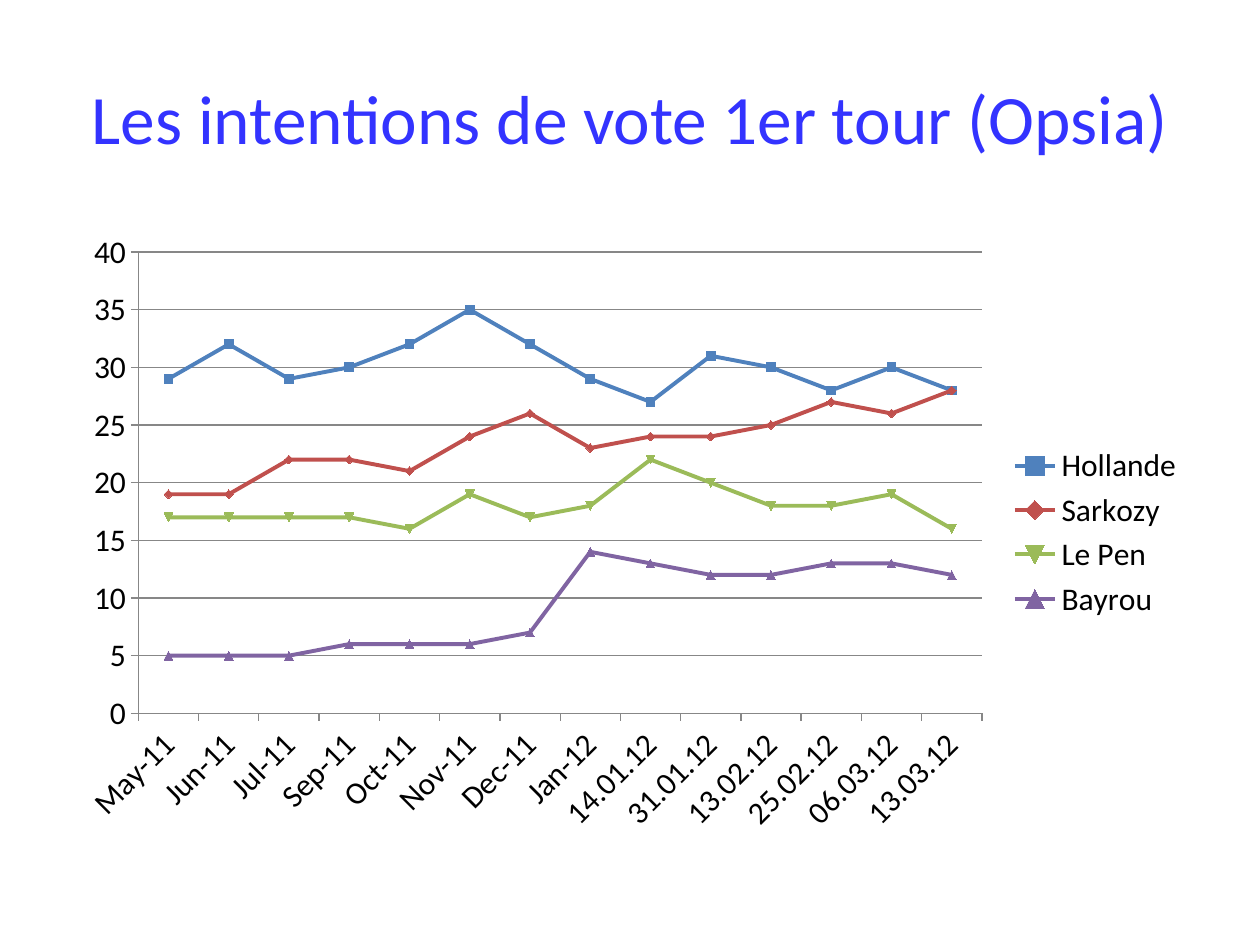
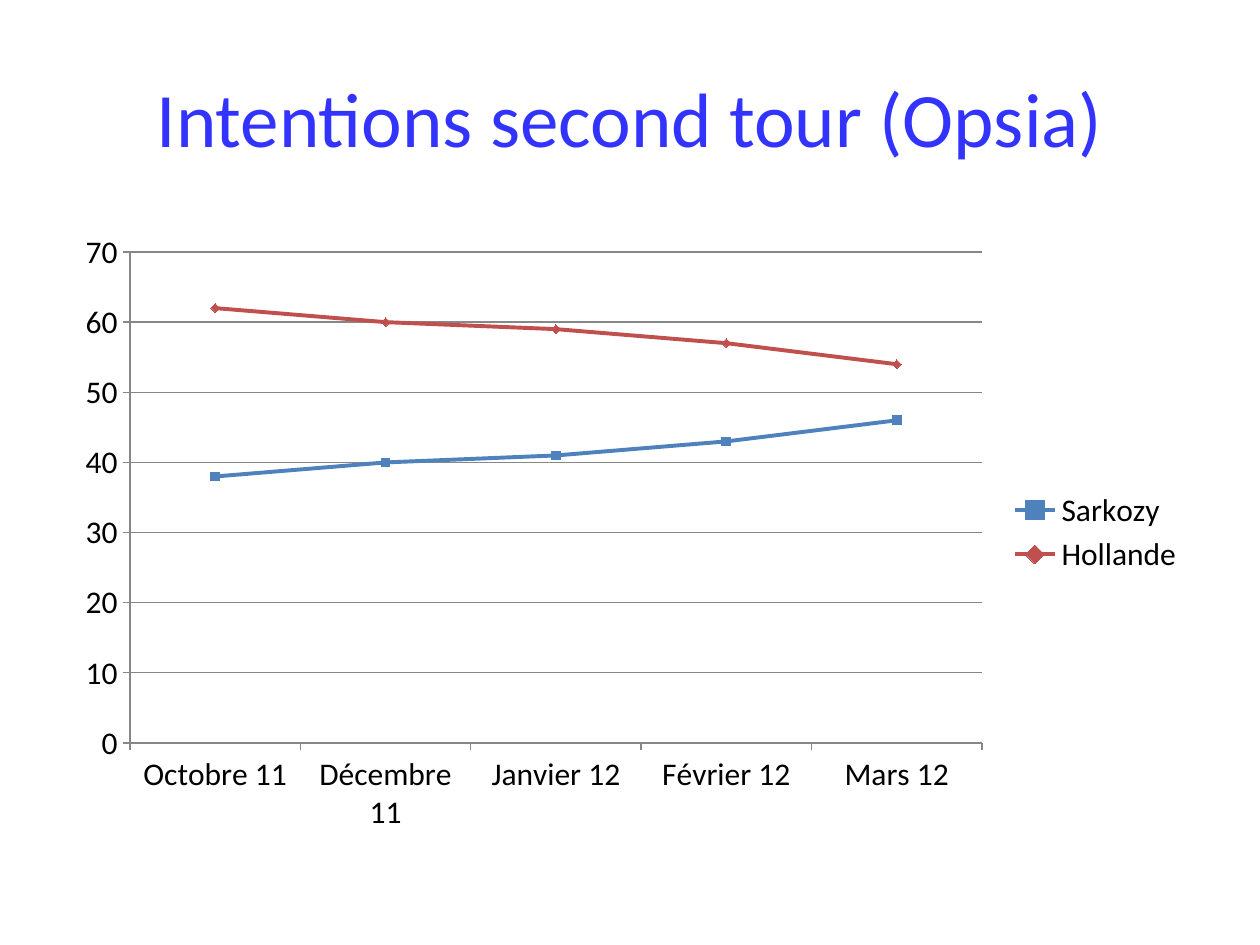
from pptx import Presentation
from pptx.chart.data import CategoryChartData
from pptx.dml.color import RGBColor
from pptx.enum.chart import XL_CHART_TYPE as ChartType, XL_LEGEND_POSITION as LegendPosition
from pptx.enum.chart import XL_TICK_MARK as TickMark
from pptx.enum.text import MSO_ANCHOR as Anchor, PP_ALIGN as Align
from pptx.util import Pt

FONT = "Calibri"
TITLE_COLOR, TEXT_COLOR, GRID_COLOR = "3333FF", "000000", "878787"
SERIES_COLORS = ["4F81BD", "C0504D", "9BBB59", "8064A2"]
TITLE_AREA = (36, 21.6, 648, 90)
CHART_AREA = (36, 126, 648, 356.4)

POLLS = [
    {
        "title": "Les intentions de vote 1er tour (Opsia)",
        "title_size": 39.6,
        "axis_top": 40,
        "axis_step": 5,
        "dates": ["May-11", "Jun-11", "Jul-11", "Sep-11", "Oct-11", "Nov-11", "Dec-11", "Jan-12",
                  "14.01.12", "31.01.12", "13.02.12", "25.02.12", "06.03.12", "13.03.12"],
        "candidates": {
            "Hollande": [29, 32, 29, 30, 32, 35, 32, 29, 27, 31, 30, 28, 30, 28],
            "Sarkozy": [19, 19, 22, 22, 21, 24, 26, 23, 24, 24, 25, 27, 26, 28],
            "Le Pen": [17, 17, 17, 17, 16, 19, 17, 18, 22, 20, 18, 18, 19, 16],
            "Bayrou": [5, 5, 5, 6, 6, 6, 7, 14, 13, 12, 12, 13, 13, 12],
        },
    },
    {
        "title": "Intentions second tour (Opsia)",
        "title_size": 44,
        "axis_top": 70,
        "axis_step": 10,
        "dates": ["Octobre 11", "Décembre 11", "Janvier 12", "Février 12", "Mars 12"],
        "candidates": {
            "Sarkozy": [38, 40, 41, 43, 46],
            "Hollande": [62, 60, 59, 57, 54],
        },
    },
]


def color(code):
    return RGBColor.from_string(code)


def set_font(font, size, code):
    font.name = FONT
    font.size = Pt(size)
    font.color.rgb = color(code)


def set_line(line, code, width):
    line.color.rgb = color(code)
    line.width = Pt(width)


def add_title(page, text, size):
    box = page.shapes.title
    box.left, box.top, box.width, box.height = map(Pt, TITLE_AREA)
    box.text_frame.vertical_anchor = Anchor.MIDDLE
    para = box.text_frame.paragraphs[0]
    para.alignment = Align.CENTER
    span = para.add_run()
    span.text = text
    set_font(span.font, size, TITLE_COLOR)


def add_poll_chart(page, poll):
    data = CategoryChartData(number_format="General")
    data.categories = poll["dates"]
    for candidate, scores in poll["candidates"].items():
        data.add_series(candidate, scores)
    frame = page.shapes.add_chart(ChartType.LINE_MARKERS, *map(Pt, CHART_AREA), data)
    chart = frame.chart
    chart.has_title = False
    set_font(chart.font, 18, TEXT_COLOR)
    chart.has_legend = True
    chart.legend.position = LegendPosition.RIGHT
    chart.legend.include_in_layout = False

    for axis in (chart.category_axis, chart.value_axis):
        axis.major_tick_mark = TickMark.OUTSIDE
        axis.minor_tick_mark = TickMark.NONE
        set_line(axis.format.line, GRID_COLOR, 0.75)
    scale = chart.value_axis
    scale.minimum_scale, scale.maximum_scale = 0, poll["axis_top"]
    scale.major_unit = poll["axis_step"]
    scale.has_major_gridlines = True
    set_line(scale.major_gridlines.format.line, GRID_COLOR, 0.75)

    plot = chart.plots[0]
    plot.vary_by_categories = False
    for series, code in zip(plot.series, SERIES_COLORS):
        series.smooth = False
        set_line(series.format.line, code, 2.25)
        marker = series.marker.format
        marker.fill.solid()
        marker.fill.fore_color.rgb = color(code)
        set_line(marker.line, code, 0.75)


def main():
    """Build one page with a line chart for each poll."""
    deck = Presentation()
    deck.slide_width, deck.slide_height = Pt(720), Pt(540)
    for poll in POLLS:
        page = deck.slides.add_slide(deck.slide_layouts[5])
        add_title(page, poll["title"], poll["title_size"])
        add_poll_chart(page, poll)
    deck.save("out.pptx")


if __name__ == "__main__":
    main()
